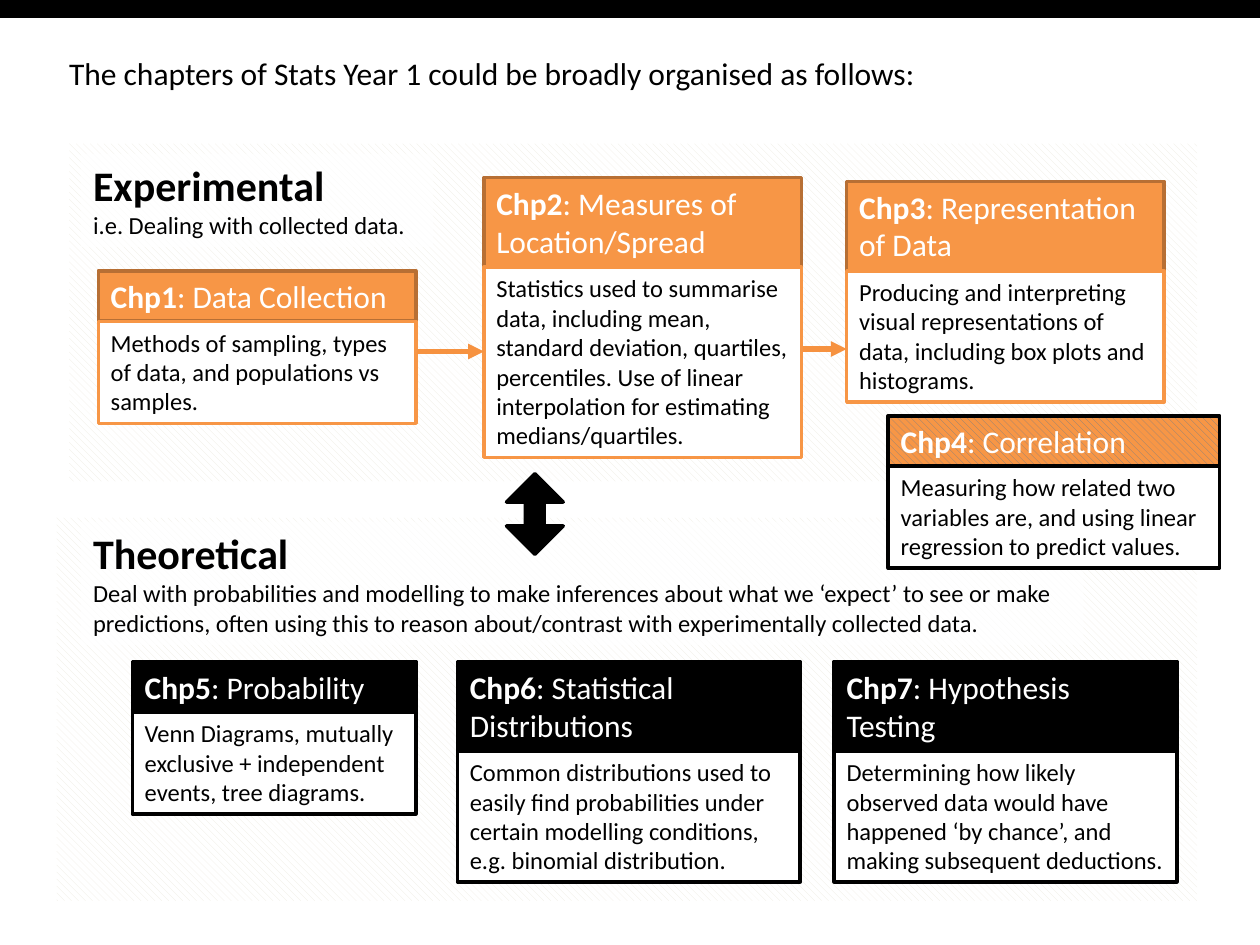
from lxml import etree
from pptx import Presentation
from pptx.dml.color import RGBColor
from pptx.enum.dml import MSO_PATTERN
from pptx.enum.shapes import MSO_CONNECTOR, MSO_SHAPE
from pptx.enum.text import MSO_ANCHOR, MSO_AUTO_SIZE, PP_ALIGN
from pptx.oxml.ns import qn
from pptx.util import Inches, Pt

RECTANGLE = MSO_SHAPE.RECTANGLE
DOUBLE_ARROW = MSO_SHAPE.UP_DOWN_ARROW
STRAIGHT = MSO_CONNECTOR.STRAIGHT
STRIPES = MSO_PATTERN.WIDE_DOWNWARD_DIAGONAL
TOP = MSO_ANCHOR.TOP
LEFT = PP_ALIGN.LEFT
GROW = MSO_AUTO_SIZE.SHAPE_TO_FIT_TEXT

FONT = "Calibri"
BLACK, WHITE = "000000", "FFFFFF"
ORANGE, DARK_ORANGE, ARROW_ORANGE = "F79646", "B76F34", "F69240"
CREAM, GREY = "EEECE1", "808080"

# Heading heights for one and two lines of text
ONE_LINE, TWO_LINES = 0.4, 0.71

# name, title, description, left, top, width, heading height, body height, style
CHAPTERS = [
    ("Chp1", "Data Collection",
     "Methods of sampling, types of data, and populations vs samples.",
     0.78, 2.15, 2.52, ONE_LINE, 0.81, "experimental"),
    ("Chp2", "Measures of Location/Spread",
     "Statistics used to summarise data, including mean, standard deviation, "
     "quartiles, percentiles. Use of linear interpolation for estimating "
     "medians/quartiles.",
     3.84, 1.41, 2.52, TWO_LINES, 1.51, "experimental"),
    ("Chp3", "Representation of Data",
     "Producing and interpreting visual representations of data, including "
     "box plots and histograms.",
     6.72, 1.44, 2.52, TWO_LINES, 1.04, "experimental"),
    ("Chp5", "Probability",
     "Venn Diagrams, mutually exclusive + independent events, tree diagrams.",
     1.05, 5.25, 2.25, ONE_LINE, 0.81, "theoretical"),
    ("Chp6", "Statistical Distributions",
     "Common distributions used to easily find probabilities under certain "
     "modelling conditions, e.g. binomial distribution.",
     3.63, 5.25, 2.72, TWO_LINES, 1.04, "theoretical"),
    ("Chp7", "Hypothesis Testing",
     "Determining how likely observed data would have happened ‘by chance’, "
     "and making subsequent deductions.",
     6.62, 5.25, 2.72, TWO_LINES, 1.04, "theoretical"),
    ("Chp4", "Correlation",
     "Measuring how related two variables are, and using linear regression "
     "to predict values.",
     7.05, 3.3, 2.63, ONE_LINE, 0.81, "both"),
]

# heading fill, heading line, body line
STYLES = {
    "experimental": (ORANGE, DARK_ORANGE, ORANGE),
    "theoretical": (BLACK, BLACK, BLACK),
    "both": ((GREY, ORANGE), BLACK, BLACK),
}


def colour(value):
    return RGBColor.from_string(value)


def add_box(page, left, top, width, height, fill, line=None, kind=RECTANGLE):
    """Add a shape; a pair of colours as fill gives diagonal stripes."""
    box = page.shapes.add_shape(
        kind, Inches(left), Inches(top), Inches(width), Inches(height))
    box.shadow.inherit = False
    if isinstance(fill, tuple):
        box.fill.patterned()
        box.fill.pattern = STRIPES
        box.fill.fore_color.rgb, box.fill.back_color.rgb = map(colour, fill)
    else:
        box.fill.solid()
        box.fill.fore_color.rgb = colour(fill)
    if line:
        box.line.color.rgb = colour(line)
        box.line.width = Pt(2)
    else:
        box.line.fill.background()
    return box


def write(box, paragraphs, text_colour=BLACK):
    """Fill a box with paragraphs, each a list of (text, size, bold)."""
    frame = box.text_frame
    frame.word_wrap = True
    frame.auto_size = GROW
    frame.vertical_anchor = TOP
    for index, pieces in enumerate(paragraphs):
        para = frame.add_paragraph() if index else frame.paragraphs[0]
        para.alignment = LEFT
        for text, size, bold in pieces:
            span = para.add_run()
            span.text = text
            span.font.name = FONT
            span.font.size = Pt(size)
            span.font.bold = bold
            span.font.color.rgb = colour(text_colour)


def add_section(page, panel, label, name, description):
    """Add a striped panel and its see-through label."""
    add_box(page, *panel, (CREAM, WHITE))
    box = add_box(page, *label, WHITE)
    shade = box.fill._xPr.find(qn("a:solidFill"))[0]
    etree.SubElement(shade, qn("a:alpha"), val="72000")
    write(box, [[(name, 24, True)], [(description, 14, False)]])


def add_chapter(page, name, title, description, left, top, width,
                heading_height, body_height, style):
    """Add a coloured heading with a white description below it."""
    fill, heading_line, body_line = STYLES[style]
    heading = add_box(page, left, top, width, heading_height, fill, heading_line)
    write(heading, [[(name, 18, True), (": " + title, 18, False)]], WHITE)
    body = add_box(page, left, top + heading_height, width, body_height,
                   WHITE, body_line)
    write(body, [[(description, 14, False)]])


def add_arrow(page, start, end, height):
    arrow = page.shapes.add_connector(
        STRAIGHT, Inches(start), Inches(height), Inches(end), Inches(height))
    arrow.line.color.rgb = colour(ARROW_ORANGE)
    arrow.line.width = Pt(3)
    etree.SubElement(arrow.line._get_or_add_ln(), qn("a:tailEnd"), type="triangle")
    etree.SubElement(arrow._element.spPr, qn("a:effectLst"))


def main():
    deck = Presentation()
    deck.slide_width, deck.slide_height = Inches(10), Inches(7.5)
    page = deck.slides.add_slide(deck.slide_layouts[6])

    # Introduction
    intro = page.shapes.add_textbox(
        Inches(0.45), Inches(0.38), Inches(8.9), Inches(0.4))
    write(intro, [[("The chapters of Stats Year 1 could be broadly organised "
                    "as follows:", 18, False)]])

    # Sections and the arrow between them
    add_section(page, (0.55, 1.14, 8.95, 2.68), (0.64, 1.22, 2.8, 0.74),
                "Experimental", "i.e. Dealing with collected data.")
    add_section(page, (0.45, 4.11, 9.05, 3.04), (0.64, 4.14, 7.96, 0.98),
                "Theoretical",
                "Deal with probabilities and modelling to make inferences about "
                "what we ‘expect’ to see or make predictions, often using this to "
                "reason about/contrast with experimentally collected data.")
    link = add_box(page, 4.02, 3.76, 0.45, 0.64, BLACK, BLACK, DOUBLE_ARROW)
    link.adjustments[1] = 0.33

    # Chapters and their order
    for chapter in CHAPTERS:
        add_chapter(page, *chapter)
    add_arrow(page, 3.31, 3.84, 2.79)
    add_arrow(page, 6.37, 6.72, 2.77)

    # Top bar
    add_box(page, 0, 0, 10, 0.13, BLACK, BLACK)

    deck.save("out.pptx")


if __name__ == "__main__":
    main()
